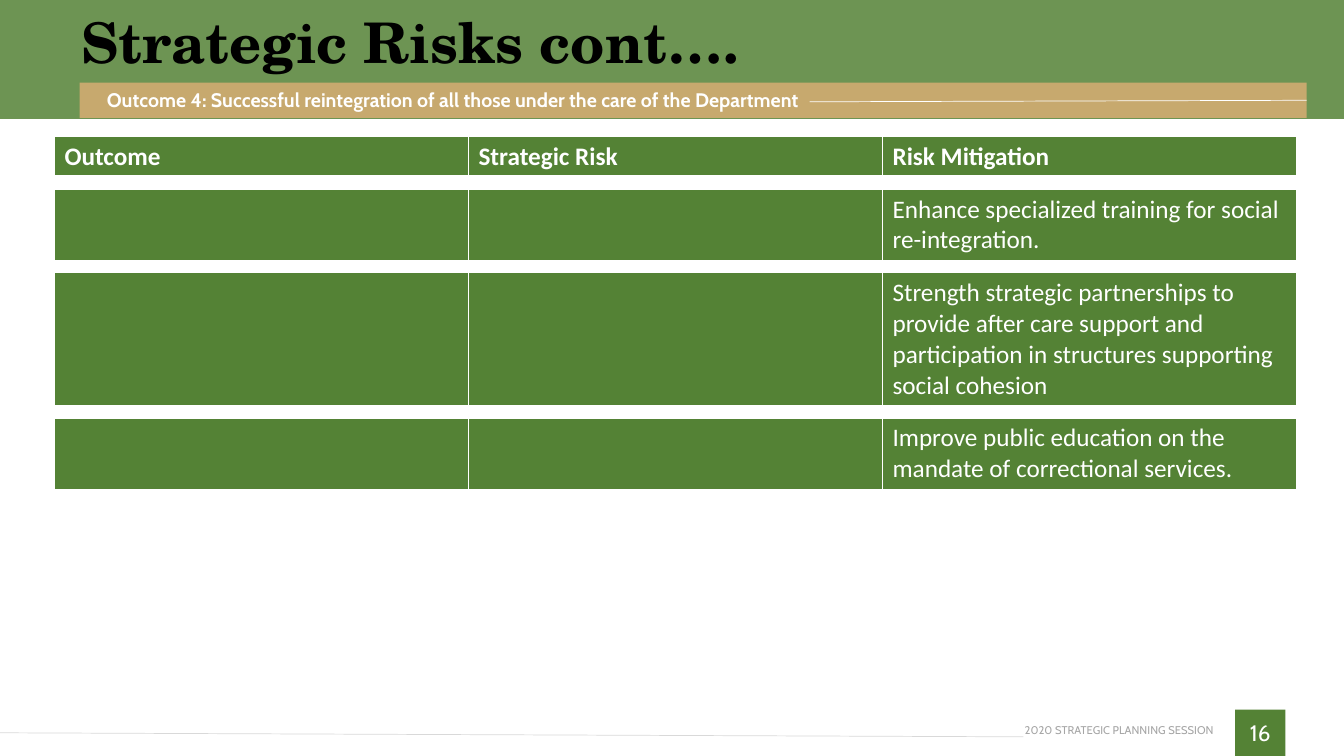
import pptx
import pptx.util
import pptx.dml.color
import pptx.enum.shapes
import pptx.enum.text
import pptx.oxml
import pptx.oxml.ns
import lxml.etree

Inches, Pt = pptx.util.Inches, pptx.util.Pt
RGB = pptx.dml.color.RGBColor
SHAPE = pptx.enum.shapes.MSO_SHAPE
ALIGN = pptx.enum.text.PP_ALIGN
ANCHOR = pptx.enum.text.MSO_ANCHOR
qn = pptx.oxml.ns.qn

# Content
TITLE = "Strategic Risks cont…."
OUTCOME = "Outcome 4: Successful reintegration of all those under the care of the Department"
FOOTER = "2020 STRATEGIC PLANNING SESSION"
NUMBER = "16"
HEADS = ["Outcome", "Strategic Risk", "Risk Mitigation"]
RISKS = [  # mitigation, row height
    ("Enhance specialized training for social re-integration.", 0.71),
    ("Strength strategic partnerships to provide after care support and "
     "participation in structures supporting social cohesion", 1.32),
    ("Improve public education on the mandate of correctional services.", 0.71),
]

GREEN = RGB(0x54, 0x82, 0x35)
GOLD = RGB(0xC7, 0xA9, 0x6E)
WHITE = RGB(0xFF, 0xFF, 0xFF)
BLACK = RGB(0, 0, 0)
GREY = RGB(0xA6, 0xA6, 0xA6)
PALE = RGB(0xD9, 0xD9, 0xD9)

HEAD, GAP, WIDTH = 0.4, 0.12, 12.32

deck = pptx.Presentation()
deck.slide_width, deck.slide_height = Inches(13.33), Inches(7.5)
slide = deck.slides.add_slide(deck.slide_layouts[5])
shapes = slide.shapes


def write(frame, text, size, color, font="Cabin", bold=False, align=ALIGN.LEFT):
    frame.text = text
    frame.word_wrap = True
    para = frame.paragraphs[0]
    para.alignment = align
    for run in para.runs:
        run.font.name, run.font.size, run.font.bold = font, Pt(size), bold
        run.font.color.rgb = color
    return para


def trim(frame, anchor=ANCHOR.MIDDLE):
    frame.margin_left = frame.margin_right = 0
    frame.margin_top = frame.margin_bottom = 0
    frame.vertical_anchor = anchor


def block(kind, box, color):
    item = shapes.add_shape(kind, *map(Inches, box))
    item.shadow.inherit = False
    item.fill.solid()
    item.fill.fore_color.rgb = color
    item.line.fill.background()
    return item


def label(box, *args, **more):
    frame = shapes.add_textbox(*map(Inches, box)).text_frame
    trim(frame)
    return write(frame, *args, **more)


def rule(ends, color):
    line = shapes.add_connector(pptx.enum.shapes.MSO_CONNECTOR.STRAIGHT,
                                *map(Inches, ends))
    line.line.color.rgb, line.line.width = color, Pt(0.5)
    lxml.etree.SubElement(line._element.spPr, qn("a:effectLst"))
    return line


def edge(cell, low):
    props = cell._tc.get_or_add_tcPr()
    sides = (("lnL", 1), ("lnR", 1), ("lnT", 1), ("lnB", low))
    for spot, (tag, width) in enumerate(sides):
        line = lxml.etree.Element(qn("a:" + tag), w=str(Pt(width)))
        fill = lxml.etree.SubElement(line, qn("a:solidFill"))
        lxml.etree.SubElement(fill, qn("a:srgbClr"), val=str(WHITE))
        props.insert(spot, line)


# Footer
page = block(SHAPE.RECTANGLE, (12.25, 7.04, 0.5, 0.46), GREEN)
write(page.text_frame, NUMBER, 16, WHITE, align=ALIGN.CENTER)
page.text_frame.vertical_anchor = ANCHOR.MIDDLE
page.text_frame.margin_left = page.text_frame.margin_right = 0
label((10.15, 7.18, 1.89, 0.13), FOOTER, 8, GREY, align=ALIGN.RIGHT)
rule((10.15, 7.31, 0, 7.27), PALE)

# Header bands
top = block(SHAPE.RECTANGLE, (0, 0, 13.33, 1.18), GREEN)
tint = top._element.spPr.find(".//" + qn("a:srgbClr"))
lxml.etree.SubElement(tint, qn("a:alpha"), val="85000")
band = block(SHAPE.ROUNDED_RECTANGLE, (0.79, 0.82, 12.17, 0.35), GOLD)
band.adjustments[0] = 0
rule((8.03, 1.01, 12.95, 1), WHITE).end_connect(band, 3)

# Title, brought in front of the bands
title = shapes.title
title.left, title.top = Inches(0.81), Inches(0.15)
title.width, title.height = Inches(11.56), Inches(0.59)
trim(title.text_frame, ANCHOR.TOP)
title.text_frame.auto_size = pptx.enum.text.MSO_AUTO_SIZE.NONE
write(title.text_frame, TITLE, 40, BLACK, "TeX Gyre Schola", True).line_spacing = 0.9
shapes._spTree.append(title._element)

# Risk table: a thin white row follows every filled row
rows = [(HEADS, HEAD, True)]
rows += [(["", "", text], tall, False) for text, tall in RISKS]
high = sum(tall + GAP for _, tall, _ in rows)
grid = shapes.add_table(2 * len(rows), len(HEADS), Inches(0.54), Inches(1.35),
                        Inches(WIDTH), Inches(high)).table
for col in grid.columns:
    col.width = Inches(WIDTH / len(HEADS))
for r, (texts, tall, bold) in enumerate(rows):
    grid.rows[2 * r].height = Inches(tall)
    grid.rows[2 * r + 1].height = Inches(GAP)
    for c, text in enumerate(texts):
        cell, thin = grid.cell(2 * r, c), grid.cell(2 * r + 1, c)
        write(cell.text_frame, text, 18, WHITE, "Calibri", bold)
        thin.margin_top = thin.margin_bottom = 0
        thin.text_frame.paragraphs[0]._p.get_or_add_endParaRPr().set("sz", "400")
        for part, color in ((cell, GREEN), (thin, WHITE)):
            part.fill.solid()
            part.fill.fore_color.rgb = color
            edge(part, 3 if bold and part is cell else 1)

# Outcome line
label((1.06, 0.87, 7.51, 0.24), OUTCOME, 14, WHITE, bold=True).space_after = Pt(3)

deck.save("out.pptx")
